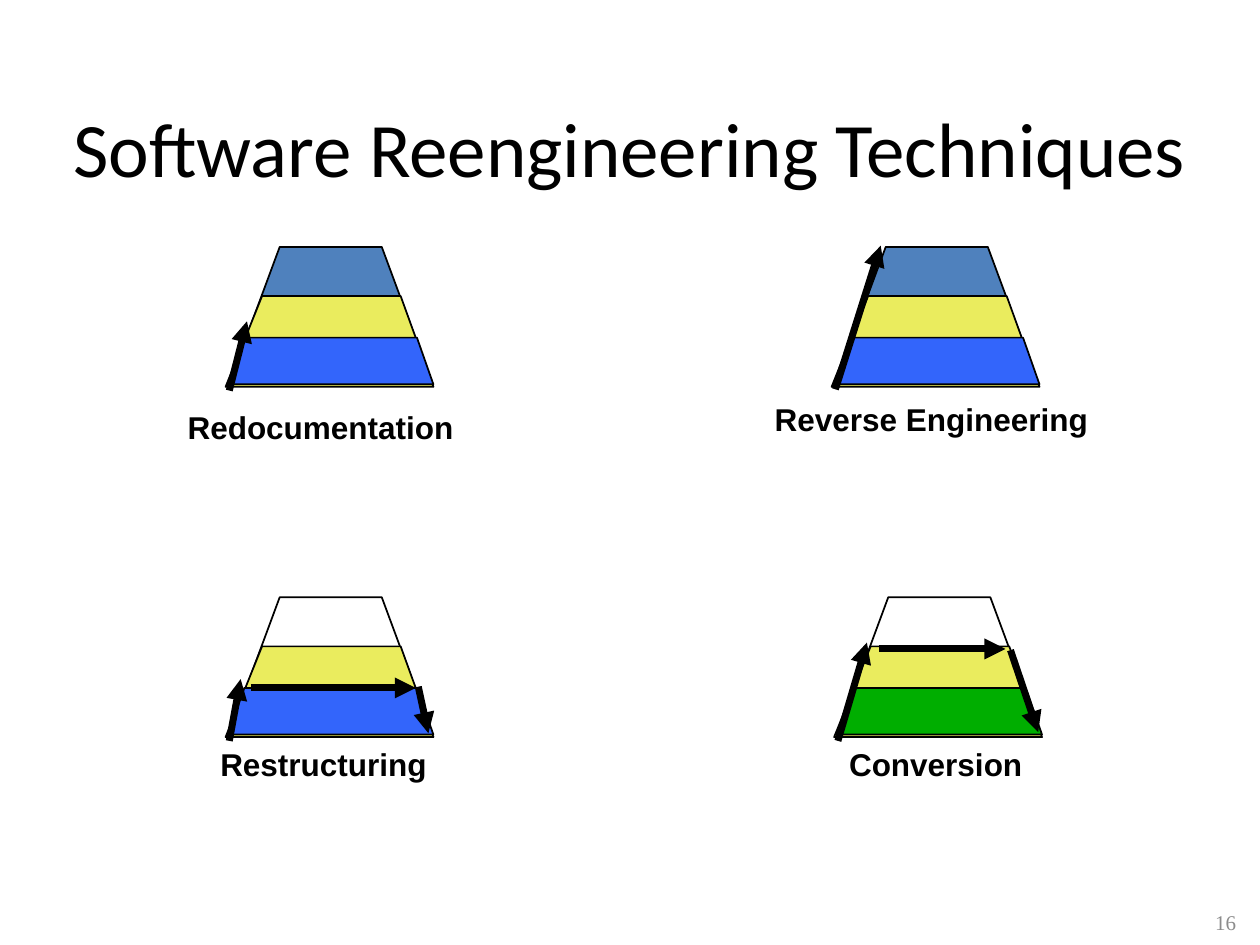
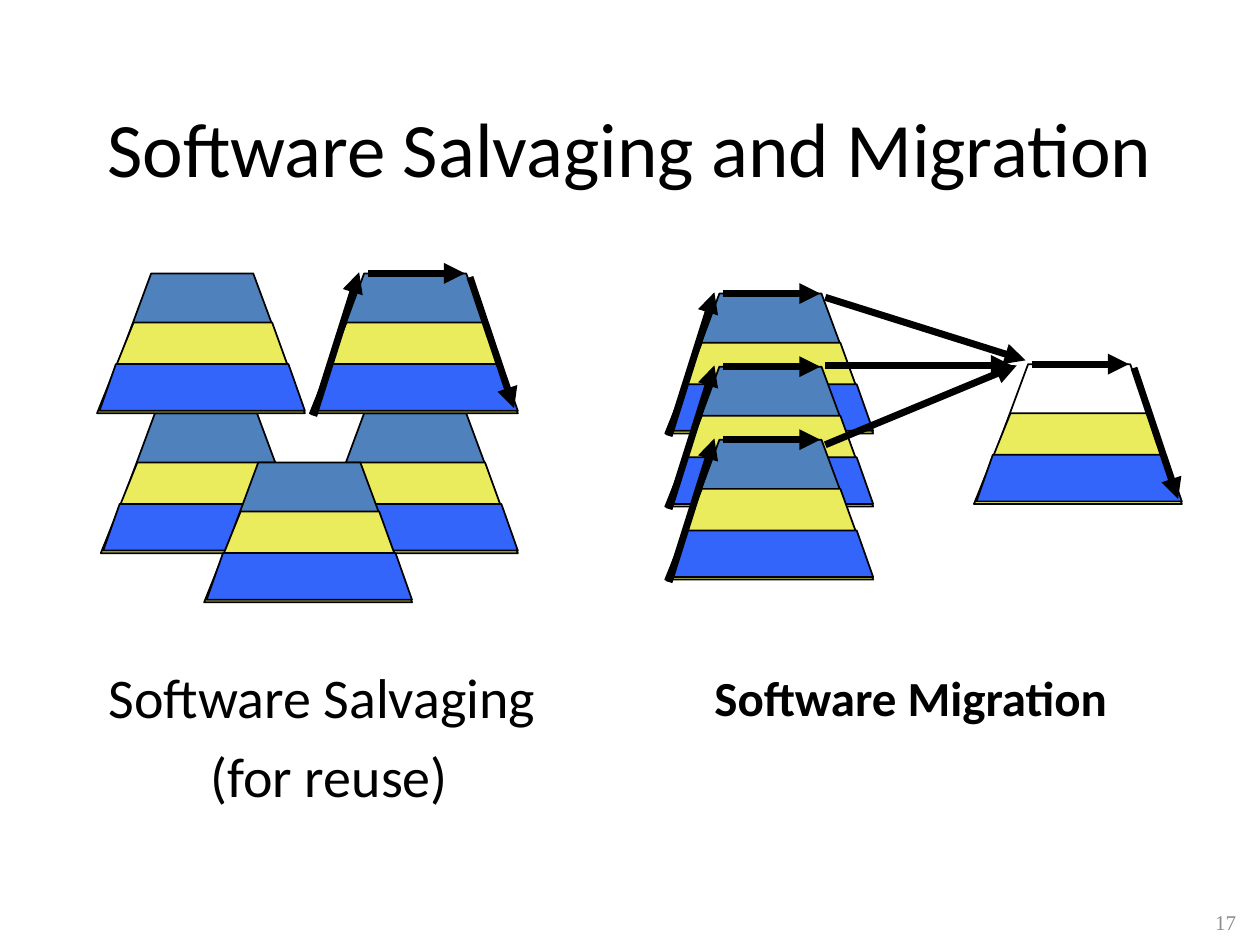
from lxml import etree
from pptx import Presentation
from pptx import util as u
from pptx.dml.color import RGBColor
from pptx.enum import shapes, text
from pptx.oxml.ns import qn

COLOURS = {
    "ink": "000000",
    "number": "8C8C8C",
    "steel": "4F81BD",
    "yellow": "EAEC5E",
    "blue": "3365FB",
    "green": "00AE00",
}

# Outlines of the three pyramid layers, from top to base, relative to its corner
LAYERS = (
    ((0.03, 1.08), (0.43, 0), (1.24, 0), (1.64, 1.08)),
    ((0, 1.11), (0.29, 0.39), (1.39, 0.39), (1.65, 1.11)),
    ((0.02, 1.09), (0.15, 0.72), (1.52, 0.72), (1.65, 1.09)),
)
FULL = ("steel", "yellow", "blue")
OPEN_TOP = (None, "yellow", "blue")
CONVERTED = (None, "yellow", "green")

# Arrows around a pyramid, relative to its corner
CLIMB = ((0.03, 1.13), (0.39, -0.01))
CROSS = ((0.46, 0), (1.23, 0))
DESCEND = ((1.27, 0.03), (1.62, 1.07))

TECHNIQUES = (
    # name, label box, pyramid corner, layer fills, arrows
    ("Redocumentation", (1.39, 3.22, 2.35), (1.79, 1.96), FULL,
     [((0.03, 1.14), (0.17, 0.59))]),
    ("Reverse Engineering", (6.05, 3.16, 2.75), (6.6, 1.96), FULL, [CLIMB]),
    ("Restructuring", (1.65, 5.9, 1.9), (1.79, 4.74), OPEN_TOP,
     [((0.03, 1.14), (0.12, 0.65)),
      ((0.2, 0.72), (1.51, 0.72)),
      ((1.53, 0.71), (1.61, 1.08))]),
    ("Conversion", (6.64, 5.9, 1.65), (6.62, 4.74), CONVERTED,
     [((0.03, 1.14), (0.26, 0.36)),
      ((0.36, 0.41), (1.36, 0.41)),
      ((1.4, 0.42), (1.62, 1.07))]),
)


class Deck:
    def __init__(self):
        self.prs = Presentation()
        self.prs.slide_width, self.prs.slide_height = u.Inches(10), u.Inches(7.5)
        self.slide = None

    def add_slide(self, title, number):
        self.slide = self.prs.slides.add_slide(self.prs.slide_layouts[5])
        heading = self.slide.shapes.title
        heading.left, heading.top = u.Inches(0.5), u.Inches(0.3)
        heading.width, heading.height = u.Inches(9), u.Inches(1.25)
        frame = heading.text_frame
        self.set_frame(frame, (0.05, 0.02), text.MSO_ANCHOR.BOTTOM)
        paragraph = frame.paragraphs[0]
        paragraph.alignment = text.PP_ALIGN.CENTER
        self.run(paragraph, title, 44)

        page = self.text_box((7.58, 7.12, 2.33, 0.4), (0.1, 0.05),
                             text.MSO_ANCHOR.MIDDLE).paragraphs[0]
        page.alignment = text.PP_ALIGN.RIGHT
        self.run(page, str(number), 12, "Times New Roman", colour="number")

    def set_frame(self, frame, insets, anchor):
        frame.word_wrap = True
        frame.auto_size = text.MSO_AUTO_SIZE.NONE
        frame.vertical_anchor = anchor
        frame.margin_left = frame.margin_right = u.Inches(insets[0])
        frame.margin_top = frame.margin_bottom = u.Inches(insets[1])

    def text_box(self, box, insets, anchor=text.MSO_ANCHOR.TOP):
        frame = self.slide.shapes.add_textbox(*map(u.Inches, box)).text_frame
        self.set_frame(frame, insets, anchor)
        return frame

    def run(self, paragraph, words, size, font="Calibri", bold=False, colour="ink"):
        run = paragraph.add_run()
        run.text = words
        run.font.name, run.font.size, run.font.bold = font, u.Pt(size), bold
        run.font.color.rgb = RGBColor.from_string(COLOURS[colour])

    def label(self, words, left, top, width):
        frame = self.text_box((left, top, width, 0.37), (0.1, 0.05))
        paragraph = frame.paragraphs[0]
        paragraph.line_spacing = 0.9
        self.run(paragraph, words, 18, "Arial", bold=True)

    def caption(self, box, lines, size, bold=False):
        """Write lines given as (words, left indent in inches)."""
        frame = self.text_box(box, (0.09, 0.05))
        for index, (words, indent) in enumerate(lines):
            paragraph = frame.add_paragraph() if index else frame.paragraphs[0]
            if index:
                paragraph.space_before = u.Pt(0.2 * size)
            if indent:
                paragraph._p.get_or_add_pPr().set("marL", str(u.Inches(indent)))
            self.run(paragraph, words, size, bold=bold)

    def style_line(self, line, width):
        line.color.rgb = RGBColor.from_string(COLOURS["ink"])
        line.width = u.Pt(width)

    def arrow(self, start, end, corner=(0, 0)):
        ends = [u.Inches(base + offset)
                for point in (start, end) for base, offset in zip(corner, point)]
        arrow = self.slide.shapes.add_connector(shapes.MSO_CONNECTOR.STRAIGHT, *ends)
        self.style_line(arrow.line, 4)
        etree.SubElement(arrow.line._get_or_add_ln(), qn("a:tailEnd"), type="triangle")
        etree.SubElement(arrow._element.spPr, qn("a:effectLst"))

    def pyramid(self, corner, fills=FULL, arrows=()):
        for outline, fill in zip(LAYERS, fills):
            points = [(u.Inches(corner[0] + x), u.Inches(corner[1] + y))
                      for x, y in outline]
            builder = self.slide.shapes.build_freeform(*points[0])
            builder.add_line_segments(points[1:], close=True)
            layer = builder.convert_to_shape()
            layer.shadow.inherit = False
            if fill:
                layer.fill.solid()
                layer.fill.fore_color.rgb = RGBColor.from_string(COLOURS[fill])
            else:
                layer.fill.background()
            self.style_line(layer.line, 1)
        for start, end in arrows:
            self.arrow(start, end, corner)


def add_techniques(deck):
    deck.add_slide("Software Reengineering Techniques", 16)
    for name, label_box, corner, fills, arrows in TECHNIQUES:
        deck.pyramid(corner, fills, arrows)
        deck.label(name, *label_box)


def add_salvaging_and_migration(deck):
    deck.add_slide("Software Salvaging and Migration", 17)

    deck.caption((0.77, 5.21, 3.9, 1.62),
                 [("Software Salvaging", 0), ("(for reuse)", 0.81)], 32)
    for corner in ((0.8, 3.28), (2.46, 3.28), (1.62, 3.67), (0.77, 2.17)):
        deck.pyramid(corner)
    deck.pyramid((2.46, 2.17), arrows=(CLIMB, CROSS, DESCEND))

    for row in range(3):
        deck.pyramid((5.28, 2.33 + 0.58 * row), arrows=(CLIMB, CROSS))
    deck.pyramid((7.73, 2.89), OPEN_TOP, (CROSS, DESCEND))
    for source_y, target in ((2.36, (8.14, 2.86)), (2.9, (8.03, 2.9)),
                             (3.53, (8.07, 2.9))):
        deck.arrow((6.55, source_y), target)
    deck.caption((5.58, 5.25, 4, 0.75), [("Software Migration", 0)], 28, bold=True)


def main():
    deck = Deck()
    add_techniques(deck)
    add_salvaging_and_migration(deck)
    deck.prs.save("out.pptx")


if __name__ == "__main__":
    main()
